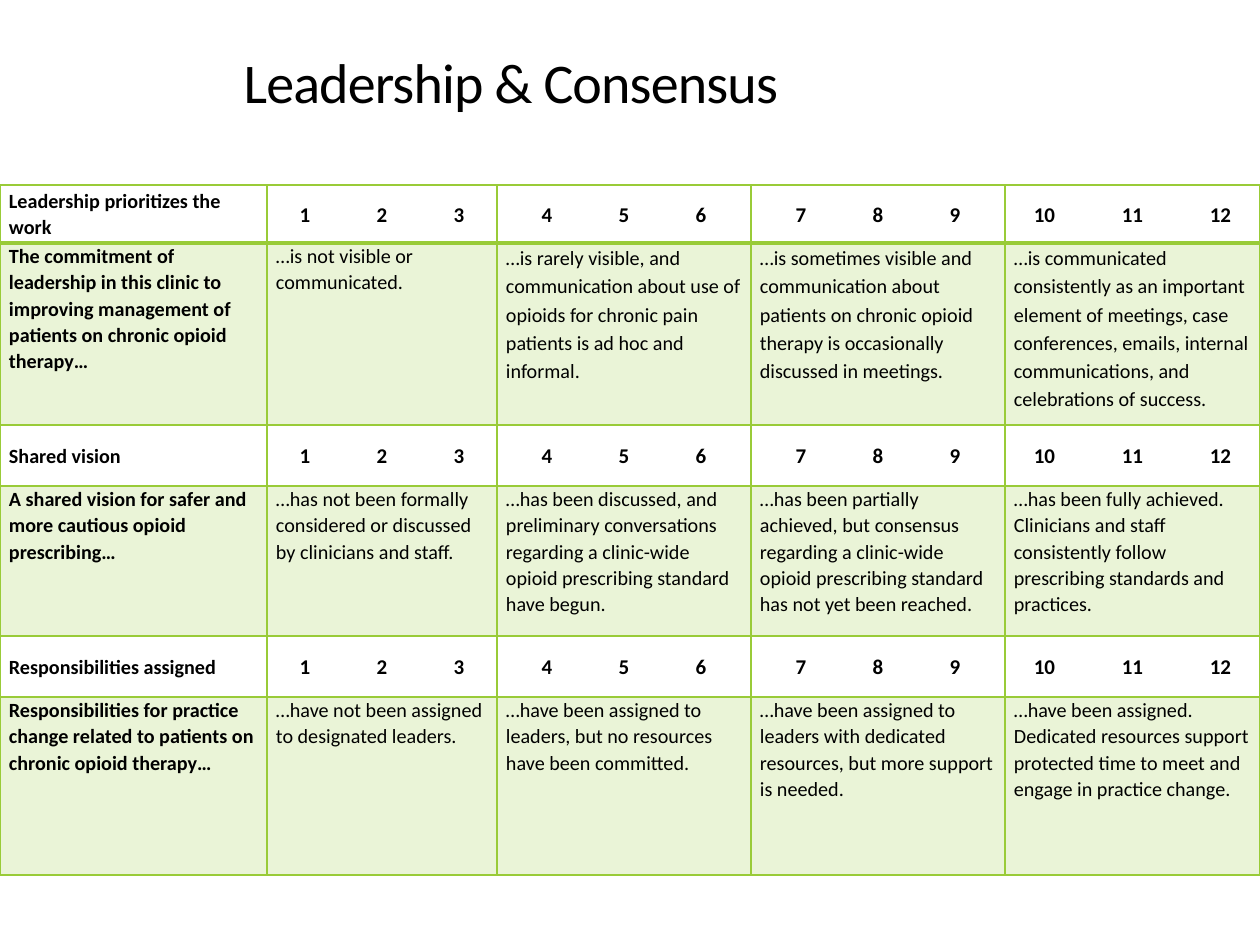
from dataclasses import dataclass

from lxml import etree
from pptx import Presentation, util as u
from pptx.dml.color import RGBColor
from pptx.enum import text
from pptx.oxml.ns import qn

GREEN = "99CB38"
BLACK = "000000"
FONT = "Calibri"
PAD = 9
COLS = [267, 230, 254, 254, 255]
ROWS = [58, 182, 61, 150, 61, 178]
STEPS = [77, 77, 77, 88]


@dataclass
class Topic:
    name: str
    stem: str
    levels: list[str]
    lead: float = 1.07


TOPICS = [
    Topic(
        "Leadership prioritizes the work",
        "The commitment of leadership in this clinic to improving management "
        "of patients on chronic opioid therapy…",
        ["…is not visible or communicated.",
         "…is rarely visible, and communication about use of opioids for "
         "chronic pain patients is ad hoc and informal.",
         "…is sometimes visible and communication about patients on chronic "
         "opioid therapy is occasionally discussed in meetings.",
         "…is communicated consistently as an important element of meetings, "
         "case conferences, emails, internal communications, and "
         "celebrations of success."],
        1.15),
    Topic(
        "Shared vision",
        "A shared vision for safer and more cautious opioid prescribing…",
        ["…has not been formally considered or discussed by clinicians and "
         "staff.",
         "…has been discussed, and preliminary conversations regarding a "
         "clinic-wide opioid prescribing standard have begun.",
         "…has been partially achieved, but consensus regarding a "
         "clinic-wide opioid prescribing standard has not yet been reached.",
         "…has been fully achieved. Clinicians and staff consistently follow "
         "prescribing standards and practices."]),
    Topic(
        "Responsibilities assigned",
        "Responsibilities for practice change related to patients on chronic "
        "opioid therapy…",
        ["…have not been assigned to designated leaders.",
         "…have been assigned to leaders, but no resources have been "
         "committed.",
         "…have been assigned to leaders with dedicated resources, but more "
         "support is needed.",
         "…have been assigned. Dedicated resources support protected time to "
         "meet and engage in practice change."]),
]


def px(n: float) -> int:
    return u.Emu(round(n * 914400 / 126))


def rgb(code: str) -> RGBColor:
    return RGBColor.from_string(code)


def add_run(par, words: str, size: float, bold: bool = False):
    run = par.add_run()
    run.text = words
    font = run.font
    font.name, font.size, font.bold = FONT, u.Pt(size), bold
    font.color.rgb = rgb(BLACK)
    return run


def edge(cell, side: str, width: float) -> None:
    line = etree.SubElement(cell._tc.get_or_add_tcPr(), qn(f"a:ln{side}"),
                            w=str(u.Pt(width)))
    fill = etree.SubElement(line, qn("a:solidFill"))
    etree.SubElement(fill, qn("a:srgbClr"), val=GREEN)


def set_cell(cell, row: int, lead: float = 1.07):
    """Format a cell for its row and return its paragraph."""
    head = row % 2 == 0
    cell.margin_left = cell.margin_right = px(PAD)
    cell.margin_top = cell.margin_bottom = 0
    cell.vertical_anchor = (text.MSO_ANCHOR.MIDDLE if head
                            else text.MSO_ANCHOR.TOP)
    for side in "LRTB":
        thick = (row, side) in [(0, "B"), (1, "T")]
        edge(cell, side, 2 if thick else 1)
    if head:
        cell.fill.background()
    else:
        cell.fill.solid()
        cell.fill.fore_color.rgb = rgb(GREEN)
        tint = cell._tc.tcPr.find(f"{qn('a:solidFill')}/{qn('a:srgbClr')}")
        etree.SubElement(tint, qn("a:alpha"), val="20000")
    par = cell.text_frame.paragraphs[0]
    par.alignment = text.PP_ALIGN.LEFT
    par.line_spacing = lead
    par.space_before, par.space_after = 0, u.Pt(3)
    return par


def add_score(par, col: int) -> None:
    """Write three scores on centred tab stops about the column's middle."""
    mid = COLS[col] / 2 - PAD
    tabs = etree.SubElement(par._p.get_or_add_pPr(), qn("a:tabLst"))
    for k in (-1, 0, 1):
        etree.SubElement(tabs, qn("a:tab"),
                         pos=str(px(mid + k * STEPS[col - 1])), algn="ctr")
    first = 3 * col - 2
    add_run(par, "".join(f"\t{first + k}" for k in range(3)), 12, True)


def add_topic(grid, row: int, topic: Topic) -> None:
    add_run(set_cell(grid.cell(row, 0), row), topic.name, 11.5, True)
    add_run(set_cell(grid.cell(row + 1, 0), row + 1), topic.stem, 11.5, True)
    for col, words in enumerate(topic.levels, 1):
        add_score(set_cell(grid.cell(row, col), row), col)
        lead = topic.lead if col > 1 else 1.07
        par = set_cell(grid.cell(row + 1, col), row + 1, lead)
        add_run(par, words, 11.5)


def add_title(slide, words: str) -> None:
    title = slide.shapes.title
    title.left, title.top = px(231), px(14)
    title.width, title.height = px(1086), px(107)
    frame = title.text_frame
    frame.word_wrap = True
    frame.auto_size = text.MSO_AUTO_SIZE.NONE
    frame.vertical_anchor = text.MSO_ANCHOR.BOTTOM
    par = frame.paragraphs[0]
    par.alignment = text.PP_ALIGN.LEFT
    par.line_spacing = 0.85
    par.space_before = 0
    run = add_run(par, words, 32)
    run.font._element.set("spc", "-50")


def add_grid(slide) -> None:
    grid = slide.shapes.add_table(len(ROWS), len(COLS), 0, px(185),
                                  px(sum(COLS)), px(sum(ROWS))).table
    grid.first_row = grid.horz_banding = False
    for col, width in zip(grid.columns, COLS):
        col.width = px(width)
    for row, height in zip(grid.rows, ROWS):
        row.height = px(height)
    for k, topic in enumerate(TOPICS):
        add_topic(grid, 2 * k, topic)


def main() -> None:
    deck = Presentation()
    deck.slide_width, deck.slide_height = px(1260), px(945)
    slide = deck.slides.add_slide(deck.slide_layouts[5])
    add_title(slide, "Leadership & Consensus")
    add_grid(slide)
    deck.save("out.pptx")


if __name__ == "__main__":
    main()
